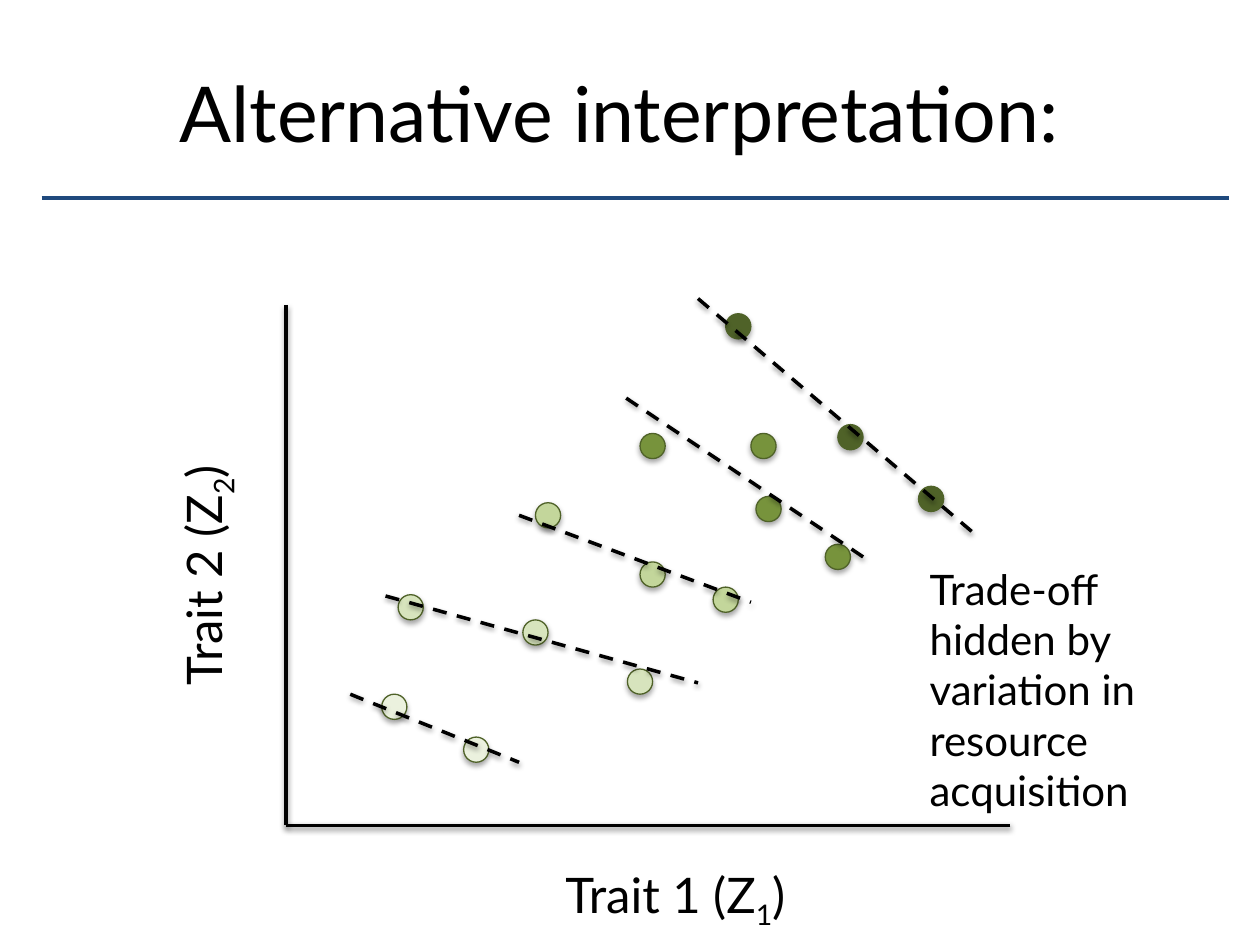
import pptx
import pptx.util
import pptx.dml.color
import pptx.enum.dml
import pptx.enum.shapes
import pptx.enum.text
import pptx.oxml
import pptx.oxml.ns
from dataclasses import dataclass

Inches = pptx.util.Inches
Pt = pptx.util.Pt
ALIGN = pptx.enum.text.PP_ALIGN


@dataclass(frozen=True)
class Theme:
    font: str = "Lato"
    ink: str = "000000"
    rule: str = "1F497D"
    dot_edge: str = "4F6228"
    title: int = 44
    axis: int = 28
    note: int = 24
    line_width: float = 2
    dot_edge_width: float = 0.75
    dot_size: float = 0.2


THEME = Theme()

# Content: text as (string, is_subscript) runs
TITLE = [("Alternative interpretation: ", False)]
NOTE = [("Trade-off hidden by variation in resource acquisition", False)]
AXIS_LABELS = [
    ([("Trait 1 (Z", False), ("1", True), (")", False)], (4.08, 6.81), 0),
    ([("Trait 2 (Z", False), ("2", True), (")", False)], (0.33, 4.28), 270),
]
AXIS_LABEL_SIZE = (2.56, 0.57)

# Axes meet at the origin
ORIGIN = (2.27, 6.55)
AXIS_ENDS = [(2.27, 2.42), (8.02, 6.55)]
TITLE_RULE = ((0.33, 1.57), (9.75, 1.57))

# Resource levels, rich to poor: dot colour, dot corners, trend line ends
LEVELS = [
    ("4F6228", [(5.76, 2.49), (6.65, 3.37), (7.29, 3.86)],
     ((5.54, 2.37), (7.75, 4.25))),
    ("77933C", [(5.08, 3.44), (5.96, 3.44), (6, 3.94), (6.55, 4.32)],
     ((4.97, 3.16), (6.85, 4.42))),
    ("C3D69B", [(4.25, 3.99), (5.08, 4.46), (5.66, 4.66)],
     ((4.12, 4.09), (5.96, 4.78))),
    ("D7E4BD", [(3.16, 4.72), (4.15, 4.92), (4.98, 5.31)],
     ((3.06, 4.73), (5.54, 5.42))),
    ("EBF1DE", [(3.03, 5.51), (3.68, 5.85)],
     ((2.78, 5.51), (4.12, 6.05))),
]


def rgb(code):
    return pptx.dml.color.RGBColor.from_string(code)


def place(part, left, top, width, height):
    part.left, part.top = Inches(left), Inches(top)
    part.width, part.height = Inches(width), Inches(height)


def write(frame, runs, *, size, align=ALIGN.LEFT, color=THEME.ink):
    frame.word_wrap = True
    frame.auto_size = pptx.enum.text.MSO_AUTO_SIZE.NONE
    frame.vertical_anchor = pptx.enum.text.MSO_ANCHOR.TOP
    paragraph = frame.paragraphs[0]
    paragraph.alignment = align
    for text, subscript in runs:
        run = paragraph.add_run()
        run.text = text
        run.font.name = THEME.font
        run.font.size = Pt(size)
        run.font.color.rgb = rgb(color)
        if subscript:
            run.font._element.set("baseline", "-25000")


def set_shadow(part, distance=None, opacity=0):
    """Replace the theme shadow by a soft downward one, or by none."""
    shadow = ""
    if distance is not None:
        shadow = (f'<a:outerShdw blurRad="{Pt(3.1)}" dist="{Pt(distance)}" '
                  'dir="5400000" rotWithShape="0"><a:srgbClr val="000000">'
                  f'<a:alpha val="{opacity * 1000}"/></a:srgbClr></a:outerShdw>')
    effects = pptx.oxml.parse_xml(
        f'<a:effectLst {pptx.oxml.ns.nsdecls("a")}>{shadow}</a:effectLst>')
    part._element.spPr.append(effects)


def add_line(shapes, start, end, *, color=THEME.ink, dashed=False, shadow=True):
    line = shapes.add_connector(pptx.enum.shapes.MSO_CONNECTOR.STRAIGHT,
                                *map(Inches, (*start, *end)))
    line.line.color.rgb = rgb(color)
    line.line.width = Pt(THEME.line_width)
    if dashed:
        line.line.dash_style = pptx.enum.dml.MSO_LINE.DASH
    if shadow:
        set_shadow(line, 1.6, 38)
    else:
        set_shadow(line)


def add_dot(shapes, corner, color):
    size = THEME.dot_size
    dot = shapes.add_shape(pptx.enum.shapes.MSO_SHAPE.OVAL,
                           *map(Inches, (*corner, size, size)))
    dot.fill.solid()
    dot.fill.fore_color.rgb = rgb(color)
    dot.line.color.rgb = rgb(THEME.dot_edge)
    dot.line.width = Pt(THEME.dot_edge_width)
    set_shadow(dot, 1.8, 35)


def main():
    deck = pptx.Presentation()
    deck.slide_width, deck.slide_height = Inches(10), Inches(7.5)
    slide = deck.slides.add_slide(deck.slide_layouts[5])
    shapes = slide.shapes

    # Title and rule
    place(shapes.title, -0.17, 0.47, 10.33, 1.83)
    write(shapes.title.text_frame, TITLE, size=THEME.title, align=ALIGN.CENTER)
    add_line(shapes, *TITLE_RULE, color=THEME.rule, shadow=False)

    # Axes and their labels
    axes = shapes.add_group_shape()
    for end in AXIS_ENDS:
        add_line(axes.shapes, end, ORIGIN)
    for runs, corner, rotation in AXIS_LABELS:
        label = shapes.add_textbox(*map(Inches, (*corner, *AXIS_LABEL_SIZE)))
        label.rotation = rotation
        write(label.text_frame, runs, size=THEME.axis, align=ALIGN.CENTER)

    # Dots first, so that the trend lines lie over them
    for color, corners, _ in LEVELS:
        for corner in corners:
            add_dot(shapes, corner, color)
    for _, _, trend in LEVELS:
        add_line(shapes, *trend, dashed=True)

    # Note
    note = shapes.add_textbox(*map(Inches, (7.28, 4.42, 2.47, 2.12)))
    write(note.text_frame, NOTE, size=THEME.note)

    deck.save("out.pptx")


if __name__ == "__main__":
    main()
